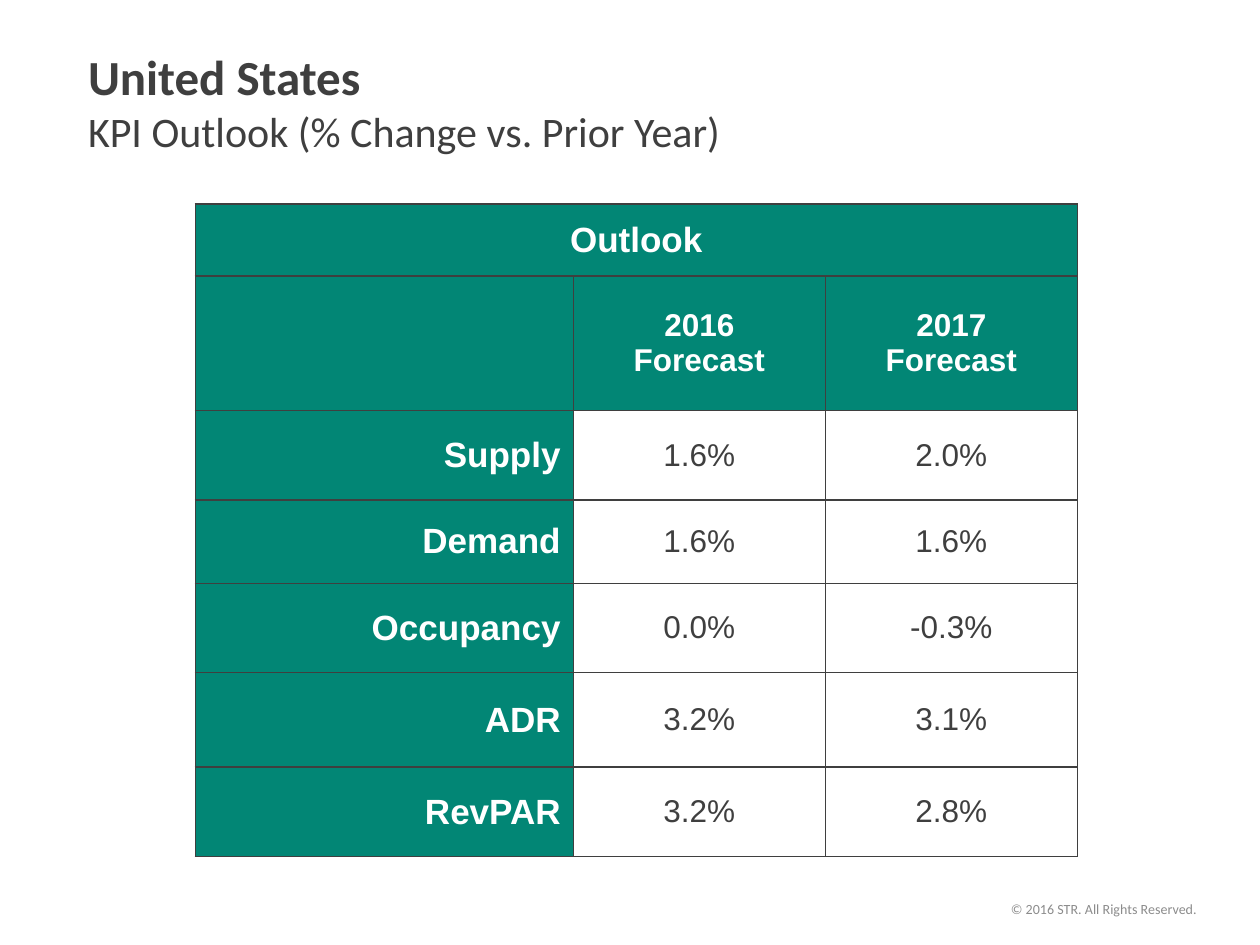
from lxml.etree import SubElement
from pptx import Presentation
from pptx.dml.color import RGBColor
from pptx.enum.text import MSO_ANCHOR, PP_ALIGN
from pptx.oxml.ns import qn
from pptx.util import Inches, Pt

COLORS = {"teal": "028675", "ink": "3F3F3F", "white": "FFFFFF", "gray": "8C8C8C"}
COLS = [3, 2, 2]
ROWS = [0.57, 1.07, 0.71, 0.66, 0.71, 0.75, 0.71]
DATA = [
    ["Outlook", "", ""],
    ["", "2016\nForecast", "2017\nForecast"],
    ["Supply", "1.6%", "2.0%"],
    ["Demand", "1.6%", "1.6%"],
    ["Occupancy", "0.0%", "-0.3%"],
    ["ADR", "3.2%", "3.1%"],
    ["RevPAR", "3.2%", "2.8%"],
]


def style(para, font, size, color, bold=False, align=PP_ALIGN.LEFT):
    para.alignment = align
    for run in para.runs:
        run.font.name = font
        run.font.size = Pt(size)
        run.font.bold = bold
        run.font.color.rgb = RGBColor.from_string(COLORS[color])


def add_text(slide, text, left, top, width, height):
    box = slide.shapes.add_textbox(
        Inches(left), Inches(top), Inches(width), Inches(height))
    frame = box.text_frame
    frame.word_wrap = True
    frame.text = text
    return frame.paragraphs


def add_title(slide, left, top, width, height):
    name, topic = add_text(
        slide, "United States\nKPI Outlook (% Change vs. Prior Year)",
        left, top, width, height)
    style(name, "Calibri", 28, "ink", True)
    style(topic, "Calibri", 24, "ink")


def add_footer(slide, left, top, width, height):
    note = add_text(slide, "© 2016 STR. All Rights Reserved.",
                    left, top, width, height)[0]
    style(note, "Calibri", 8, "gray", align=PP_ALIGN.RIGHT)


def add_border(cell):
    props = cell._tc.get_or_add_tcPr()
    for index, side in enumerate(("lnL", "lnR", "lnT", "lnB")):
        line = SubElement(props, qn("a:" + side), w=str(Pt(1)))
        fill = SubElement(line, qn("a:solidFill"))
        SubElement(fill, qn("a:srgbClr"), val=COLORS["ink"])
        props.remove(line)
        props.insert(index, line)


def fill_cell(cell, text, row, col):
    head = row < 2 or col == 0
    cell.fill.solid()
    cell.fill.fore_color.rgb = RGBColor.from_string(
        COLORS["teal" if head else "white"])
    cell.vertical_anchor = MSO_ANCHOR.MIDDLE
    if not head:
        cell.margin_left = cell.margin_right = Inches(0.27)
        cell.margin_top = cell.margin_bottom = Inches(0.1)
    cell.text_frame.text = text
    align = PP_ALIGN.RIGHT if row > 1 and col == 0 else PP_ALIGN.CENTER
    for para in cell.text_frame.paragraphs:
        style(para, "Arial", 20 if col == 0 else 18,
              "white" if head else "ink", head, align)
    add_border(cell)


def add_outlook(slide, left, top):
    table = slide.shapes.add_table(
        len(ROWS), len(COLS), Inches(left), Inches(top),
        Inches(sum(COLS)), Inches(sum(ROWS))).table
    for col, width in zip(table.columns, COLS):
        col.width = Inches(width)
    for row, height in zip(table.rows, ROWS):
        row.height = Inches(height)
    for row, texts in enumerate(DATA):
        for col, text in enumerate(texts):
            fill_cell(table.cell(row, col), text, row, col)
    table.cell(0, 0).merge(table.cell(0, len(COLS) - 1))


def main():
    deck = Presentation()
    deck.slide_width = Inches(10)
    deck.slide_height = Inches(7.5)
    slide = deck.slides.add_slide(deck.slide_layouts[6])
    add_footer(slide, 7, 7.1, 2.6, 0.24)
    add_title(slide, 0.6, 0.32, 9.25, 0.98)
    add_outlook(slide, 1.55, 1.62)
    deck.save("out.pptx")


if __name__ == "__main__":
    main()
